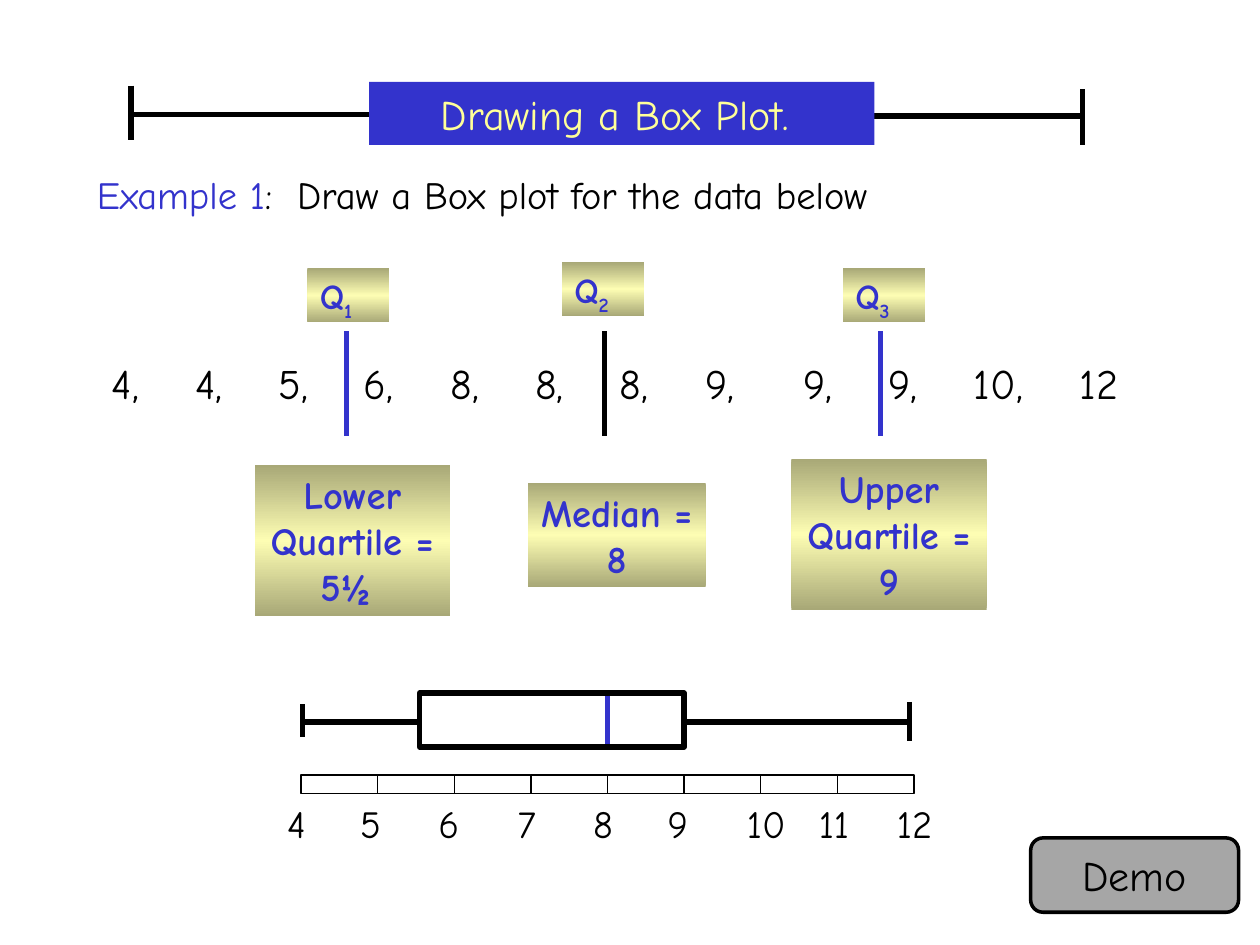
from pptx import Presentation
from pptx.dml.color import RGBColor
from pptx.enum.shapes import MSO_CONNECTOR, MSO_SHAPE
from pptx.enum.text import MSO_ANCHOR, MSO_AUTO_SIZE, PP_ALIGN
from pptx.oxml.ns import qn
from pptx.util import Inches, Pt
from lxml import etree
from copy import deepcopy

RECTANGLE, ROUNDED = MSO_SHAPE.RECTANGLE, MSO_SHAPE.ROUNDED_RECTANGLE
STRAIGHT = MSO_CONNECTOR.STRAIGHT
LEFT, CENTER = PP_ALIGN.LEFT, PP_ALIGN.CENTER
TOP, MIDDLE = MSO_ANCHOR.TOP, MSO_ANCHOR.MIDDLE
GROW = MSO_AUTO_SIZE.SHAPE_TO_FIT_TEXT
FONT = "Comic Neue"
COLORS = {name: RGBColor.from_string(value) for name, value in {
    "blue": "3333CC", "black": "000000", "yellow": "FFFF99",
    "gray": "A6A6A6", "olive": "A8A877", "cream": "FDFDB3",
}.items()}

presentation = Presentation()
presentation.slide_width, presentation.slide_height = Inches(10), Inches(7.5)
slide = presentation.slides.add_slide(presentation.slide_layouts[6])
shapes = slide.shapes

# The slide is a grid of 100 columns by 75 rows of square cells
CELL = presentation.slide_width // 100


def write(shape, pieces, size, align=LEFT, bold=False, tabs=()):
    """Fill a shape with one paragraph of (text, color) pieces."""
    frame = shape.text_frame
    frame.word_wrap = True
    frame.auto_size = GROW
    frame.vertical_anchor = TOP
    paragraph = frame.paragraphs[0]
    paragraph.alignment = align
    if tabs:
        tab_list = etree.SubElement(paragraph._p.get_or_add_pPr(), qn("a:tabLst"))
        for tab in tabs:
            etree.SubElement(tab_list, qn("a:tab"), pos=str(int(tab * CELL)), algn="l")
    for text, color in pieces:
        run = paragraph.add_run()
        run.text = text
        run.font.name = FONT
        run.font.size = Pt(size)
        run.font.bold = bold
        run.font.color.rgb = COLORS[color]
    return paragraph


def add_line(x1, y1, x2, y2, color="black"):
    line = shapes.add_connector(STRAIGHT, *(int(n * CELL) for n in (x1, y1, x2, y2)))
    line.line.color.rgb = COLORS[color]
    line.line.width = Pt(3)
    etree.SubElement(line._element.spPr, qn("a:effectLst"))


# Quartile markers: line, gradient label below, gradient Q label above
quartiles = [
    ("1", "Lower Quartile = 5½ ", 27.5, "blue", (20.2, 36.9, 15.5, 12), (24.4, 21.3)),
    ("3", "Upper Quartile = 9", 69.9, "blue", (62.8, 36.4, 15.5, 12), (66.9, 21.3)),
    ("2", "Median = 8", 48, "black", (41.9, 38.3, 14.1, 8.3), (44.6, 20.8)),
]
for number, label, x, color, label_box, corner in quartiles:
    add_line(x, 26.3, x, 34.6, color)
    for box in (label_box, (*corner, 6.5, 4.3)):
        shape = shapes.add_shape(RECTANGLE, *(int(n * CELL) for n in box))
        shape.shadow.inherit = False
        shape.line.fill.background()
        shape.fill.gradient()
        shape.fill.gradient_angle = 90
        for stop in shape.fill.gradient_stops:
            stop.color.rgb = COLORS["olive"]
        first = shape._element.spPr.find(".//" + qn("a:gs"))
        first.addnext(deepcopy(first))
        middle = shape.fill.gradient_stops[1]
        middle.position = 0.5
        middle.color.rgb = COLORS["cream"]
        if box is label_box:
            write(shape, [(label, "blue")], 22, CENTER, True)
        else:
            paragraph = write(shape, [("Q", "blue"), (number, "blue")], 20, LEFT, True)
            paragraph.runs[1].font._element.set("baseline", "-25000")

# Scale from 4 to 12, with the box of the plot above it
scale_left, step = 23.9, 6.08
outlines = [(scale_left + i * step, 61.5, step, 1.5, 0.75) for i in range(8)]
add_line(48.2, 59.3, 48.2, 55, "blue")
for *box, width in outlines + [(33.3, 55, 21, 4.3, 3)]:
    shape = shapes.add_shape(RECTANGLE, *(int(n * CELL) for n in box))
    shape.shadow.inherit = False
    shape.fill.background()
    shape.line.color.rgb = COLORS["black"]
    shape.line.width = Pt(width)

label_lefts = [21.8, 27.6, 33.8, 40.1, 46.1, 52, 58.3, 64, 70.2]
for value, left in enumerate(label_lefts, start=4):
    width = 4.2 if value < 10 else 6.7
    label = shapes.add_textbox(*(int(n * CELL) for n in (left, 63, width, 4.7)))
    write(label, [(str(value), "black")], 22)

# Whiskers of the plot and of the title
for line in [
    (23.9, 57.3, 33.5, 57.3), (24, 55.9, 24, 58.5),
    (54.3, 57.3, 72.4, 57.3), (72.2, 55.7, 72.2, 58.8),
    (69.2, 9.2, 86.1, 9.2), (85.9, 7.1, 85.9, 11.5),
    (29.4, 9.1, 10.4, 9.1), (10.4, 6.8, 10.4, 11.1),
]:
    add_line(*line)

# Data row and task
data = [4, 4, 5, 6, 8, 8, 8, 9, 9, 9, 10, 12]
data_tabs = [6.6, 13.2, 20, 26.9, 33.6, 40.3, 47.1, 54.9, 61.6, 68.4, 76.8]
data_row = shapes.add_textbox(*(int(n * CELL) for n in (7.9, 27.9, 87.5, 5)))
write(data_row, [(",\t".join(map(str, data)), "black")], 24, tabs=data_tabs)

task = shapes.add_textbox(*(int(n * CELL) for n in (6.7, 13.1, 90.2, 4.7)))
write(task, [("Example 1", "blue"), (":\tDraw a Box plot for the data below", "black")],
      22, tabs=[15.9])

# Title and demo button
title = shapes.add_shape(RECTANGLE, *(int(n * CELL) for n in (29.3, 6.5, 40.1, 5)))
button = shapes.add_shape(ROUNDED, *(int(n * CELL) for n in (81.8, 66.5, 16.5, 5.9)))
for shape, fill, text, color in [
    (title, "blue", "Drawing a Box Plot. ", "yellow"),
    (button, "gray", "Demo", "black"),
]:
    shape.shadow.inherit = False
    shape.fill.solid()
    shape.fill.fore_color.rgb = COLORS[fill]
    write(shape, [(text, color)], 24, CENTER)
title.line.fill.background()
button.line.color.rgb = COLORS["black"]
button.line.width = Pt(2)
button.text_frame.auto_size = MSO_AUTO_SIZE.NONE
button.text_frame.vertical_anchor = MIDDLE

presentation.save("out.pptx")
